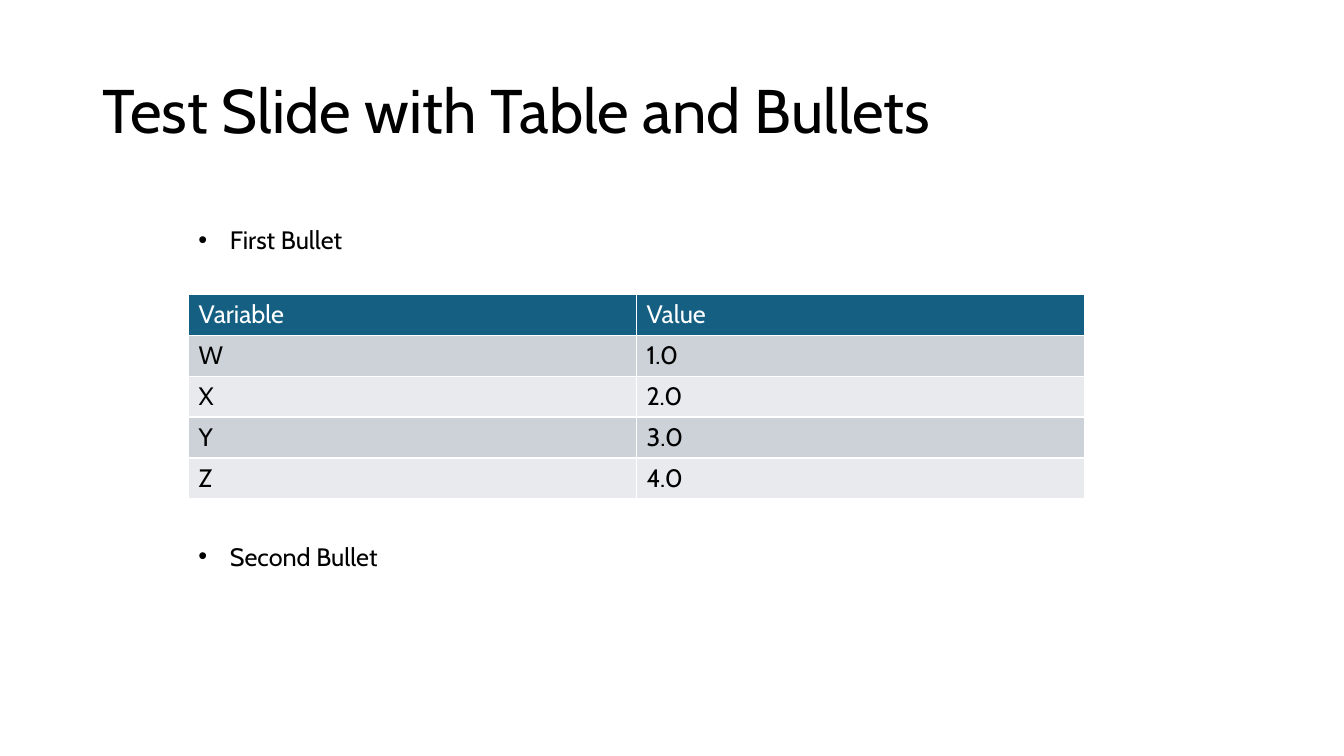
from lxml.etree import SubElement
from pptx import Presentation
from pptx.dml.color import RGBColor
from pptx.enum.text import MSO_ANCHOR as Anchor, MSO_AUTO_SIZE as AutoSize
from pptx.oxml.ns import qn
from pptx.util import Pt

COLORS = {
    "text": "000000",
    "white": "FFFFFF",
    "header": "156082",
    "odd": "CCD2D8",
    "even": "E8EAED",
}
LEFT, WIDTH = 134.64, 640
ROW_HEIGHT = 29.2
BULLET_INDENT = 22.5
ROWS = [("Variable", "Value"), ("W", "1.0"), ("X", "2.0"), ("Y", "3.0"), ("Z", "4.0")]


class SlideBuilder:
    def __init__(self, slide, font="Cabin", size=18):
        self.slide = slide
        self.font = font
        self.size = size

    def add_run(self, paragraph, text, color="text", size=None):
        run = paragraph.add_run()
        run.text = text
        run.font.name = self.font
        run.font.size = Pt(size or self.size)
        run.font.bold = False
        run.font.color.rgb = RGBColor.from_string(COLORS[color])

    def add_box(self, left, top, width, height):
        box = self.slide.shapes.add_textbox(Pt(left), Pt(top), Pt(width), Pt(height))
        box.text_frame.word_wrap = True
        return box.text_frame

    def add_title(self, text):
        frame = self.add_box(66, 28.75, 828, 104.4)
        frame.vertical_anchor = Anchor.MIDDLE
        paragraph = frame.paragraphs[0]
        paragraph.line_spacing = 0.9
        self.add_run(paragraph, text, size=44)

    def add_bullet(self, top, text):
        frame = self.add_box(LEFT, top, WIDTH, 29.1)
        frame.auto_size = AutoSize.SHAPE_TO_FIT_TEXT
        paragraph = frame.paragraphs[0]
        properties = paragraph._p.get_or_add_pPr()
        properties.set("marL", str(Pt(BULLET_INDENT)))
        properties.set("indent", str(-Pt(BULLET_INDENT)))
        SubElement(properties, qn("a:buFont"), typeface="Arial")
        SubElement(properties, qn("a:buChar"), char="•")
        self.add_run(paragraph, text)

    def add_borders(self, cell):
        properties = cell._tc.get_or_add_tcPr()
        for side in ("L", "R", "T", "B"):
            line = SubElement(properties, qn(f"a:ln{side}"), w=str(Pt(1)))
            fill = SubElement(line, qn("a:solidFill"))
            SubElement(fill, qn("a:srgbClr"), val=COLORS["white"])

    def add_table(self, top, rows):
        """Add a table with a header row and banded body rows."""
        row_count, column_count = len(rows), len(rows[0])
        table = self.slide.shapes.add_table(
            row_count, column_count, Pt(LEFT), Pt(top), Pt(WIDTH), Pt(ROW_HEIGHT * row_count)
        ).table
        for row_index, values in enumerate(rows):
            table.rows[row_index].height = Pt(ROW_HEIGHT)
            band = "odd" if row_index % 2 else "even"
            fill, color = (band, "text") if row_index else ("header", "white")
            for column_index, value in enumerate(values):
                cell = table.cell(row_index, column_index)
                self.add_borders(cell)
                cell.fill.solid()
                cell.fill.fore_color.rgb = RGBColor.from_string(COLORS[fill])
                self.add_run(cell.text_frame.paragraphs[0], value, color)


def main():
    presentation = Presentation()
    presentation.slide_width, presentation.slide_height = Pt(960), Pt(540)
    slide = presentation.slides.add_slide(presentation.slide_layouts[6])
    builder = SlideBuilder(slide)
    builder.add_title("Test Slide with Table and Bullets")
    builder.add_bullet(157, "First Bullet")
    builder.add_table(210.3, ROWS)
    builder.add_bullet(383, "Second Bullet")
    presentation.save("out.pptx")


if __name__ == "__main__":
    main()
